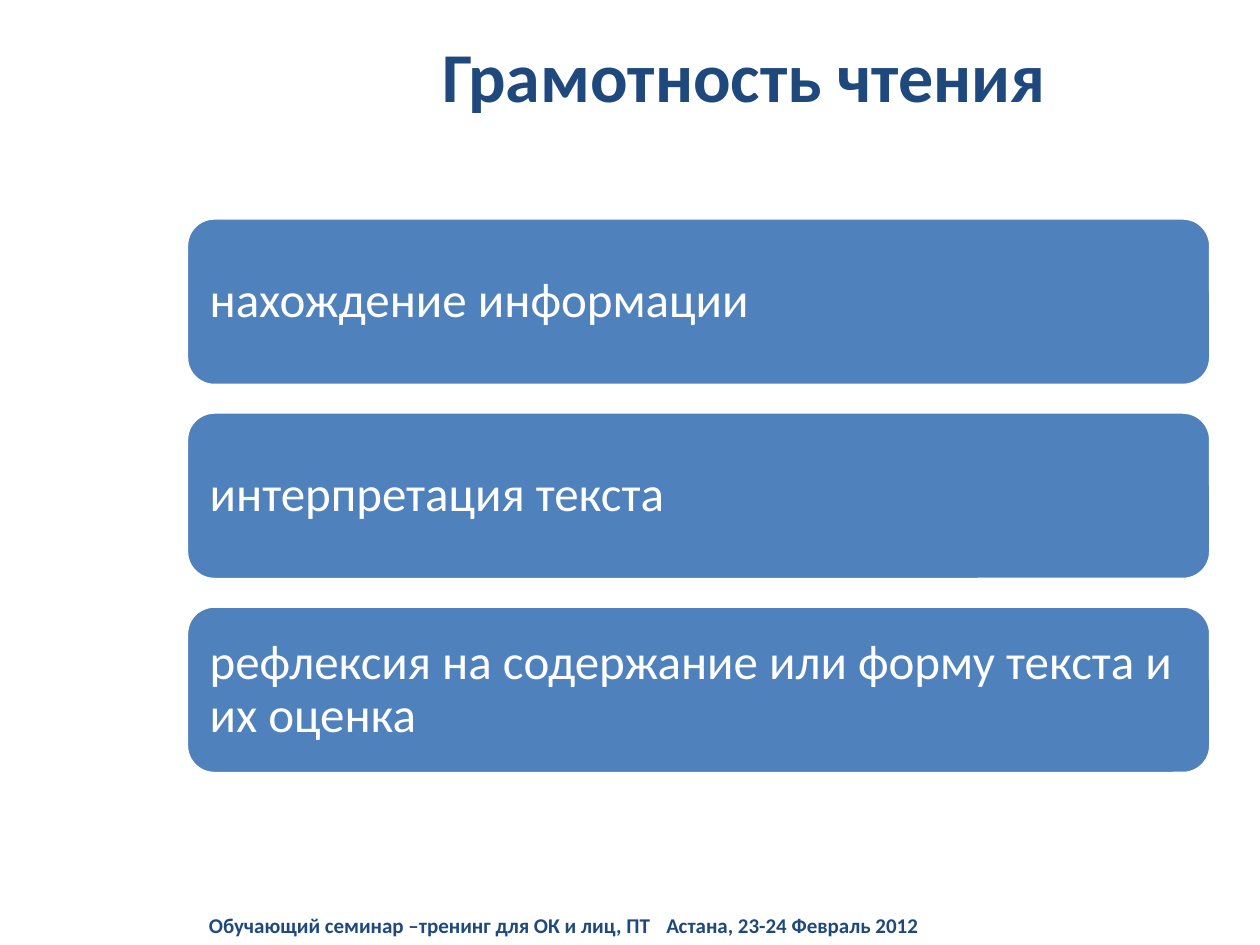
from dataclasses import dataclass
from lxml.etree import SubElement
from pptx import Presentation
from pptx.dml.color import RGBColor
from pptx.enum.shapes import MSO_SHAPE
from pptx.enum.text import MSO_ANCHOR, MSO_AUTO_SIZE, PP_ALIGN
from pptx.oxml.ns import qn
from pptx.util import Inches, Pt


@dataclass(frozen=True)
class Theme:
    font: str = "Calibri"
    navy: RGBColor = RGBColor(0x1F, 0x49, 0x7D)
    blue: RGBColor = RGBColor(0x4F, 0x81, 0xBD)
    white: RGBColor = RGBColor(0xFF, 0xFF, 0xFF)
    title_size: int = 40
    card_size: int = 28
    footer_size: int = 12


def write(box, text, size, color, bold=False, align=PP_ALIGN.LEFT,
          spacing=1.0, inset=0.1, left_inset=None, tab=None):
    frame = box.text_frame
    frame.word_wrap = True
    frame.auto_size = MSO_AUTO_SIZE.NONE
    frame.vertical_anchor = MSO_ANCHOR.MIDDLE
    frame.margin_left = Inches(left_inset or inset)
    frame.margin_right = Inches(inset)
    frame.margin_top = frame.margin_bottom = Inches(inset / 2 if inset == 0.1 else inset)
    para = frame.paragraphs[0]
    para.alignment = align
    para.line_spacing = spacing
    if tab:
        stops = SubElement(para._p.get_or_add_pPr(), qn("a:tabLst"))
        SubElement(stops, qn("a:tab"), pos=str(Inches(tab)), algn="l")
    span = para.add_run()
    span.text = text
    span.font.name = theme.font
    span.font.size = Pt(size)
    span.font.bold = bold
    span.font.color.rgb = color


theme = Theme()
deck = Presentation()
deck.slide_width, deck.slide_height = Inches(10), Inches(7.5)
page = deck.slides.add_slide(deck.slide_layouts[5])

left = Inches(1.48)
title = page.shapes.title
title.left, title.top = left, 0
title.width, title.height = deck.slide_width - left, Inches(1.18)
write(title, "Грамотность чтения", theme.title_size, theme.navy, bold=True,
      align=PP_ALIGN.CENTER, left_inset=0.43)

first_row, row_step = Inches(1.73), Inches(1.54)
skills = [
    "нахождение информации",
    "интерпретация текста",
    "рефлексия на содержание или форму текста и их оценка",
]
for row, skill in enumerate(skills):
    card = page.shapes.add_shape(MSO_SHAPE.ROUNDED_RECTANGLE, left,
                                 first_row + row * row_step, Inches(8.13), Inches(1.33))
    card.shadow.inherit = False
    card.fill.solid()
    card.fill.fore_color.rgb = theme.blue
    card.line.color.rgb = theme.white
    card.line.width = Pt(2)
    write(card, skill, theme.card_size, theme.white, spacing=0.9, inset=0.12)

footer_height = Inches(0.32)
footer = page.shapes.add_textbox(Inches(1.56), deck.slide_height - footer_height,
                                 Inches(6.64), footer_height)
write(footer, "Обучающий семинар –тренинг для ОК и лиц, ПТ\tАстана, 23-24 Февраль 2012",
      theme.footer_size, theme.navy, bold=True, tab=3.63)

deck.save("out.pptx")
